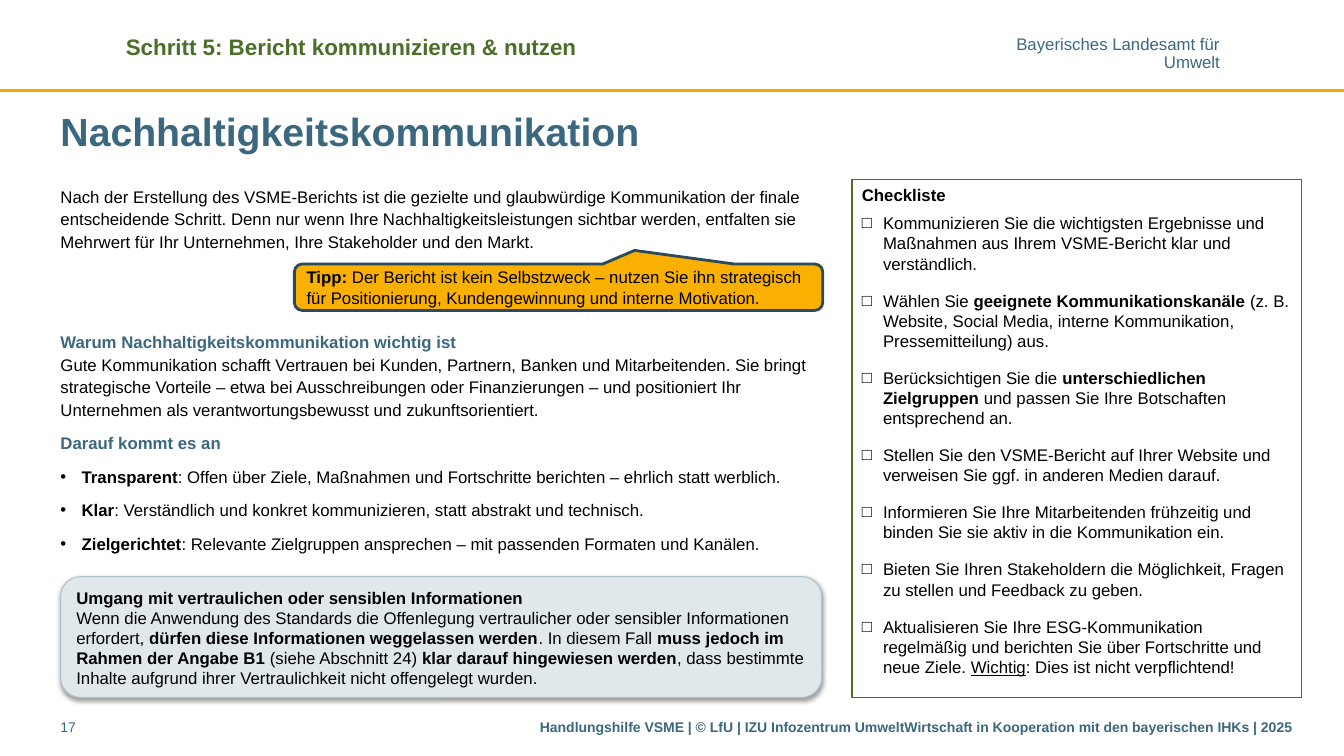
from lxml import etree
from pptx import Presentation
from pptx.dml.color import RGBColor
from pptx.enum.shapes import MSO_CONNECTOR, MSO_SHAPE
from pptx.enum.text import MSO_ANCHOR, PP_ALIGN
from pptx.oxml.ns import qn
from pptx.util import Inches, Pt

RECT = MSO_SHAPE.RECTANGLE
ROUNDED = MSO_SHAPE.ROUNDED_RECTANGLE
CALLOUT = MSO_SHAPE.ROUNDED_RECTANGULAR_CALLOUT
STRAIGHT = MSO_CONNECTOR.STRAIGHT
TOP, MIDDLE = MSO_ANCHOR.TOP, MSO_ANCHOR.MIDDLE
LEFT, RIGHT = PP_ALIGN.LEFT, PP_ALIGN.RIGHT

FONT = "Arial"
BLUE, GREEN, BLACK = "3B687F", "4B6E28", "000000"
MARGIN = 0.6
INDENT = 0.21
FLUSH = (0, 0.05)
PADDED = (0.1, 0.05)

# Each paragraph is a list of (text, style); b = bold, u = underlined, h = blue heading
INTRO = [("Nach der Erstellung des VSME-Berichts ist die gezielte und glaubwürdige Kommunikation der finale entscheidende Schritt. Denn nur wenn Ihre Nachhaltigkeitsleistungen sichtbar werden, entfalten sie Mehrwert für Ihr Unternehmen, Ihre Stakeholder und den Markt.", "")]
REASONS = [("Warum Nachhaltigkeitskommunikation wichtig ist\n", "bh"),
           ("Gute Kommunikation schafft Vertrauen bei Kunden, Partnern, Banken und Mitarbeitenden. Sie bringt strategische Vorteile – etwa bei Ausschreibungen oder Finanzierungen – und positioniert Ihr Unternehmen als verantwortungsbewusst und zukunftsorientiert.", "")]
KEY_HEADING = [("Darauf kommt es an", "bh")]
KEY_POINTS = [
    [("Transparent", "b"), (": Offen über Ziele, Maßnahmen und Fortschritte berichten – ehrlich statt werblich.", "")],
    [("Klar", "b"), (": Verständlich und konkret kommunizieren, statt abstrakt und technisch.", "")],
    [("Zielgerichtet", "b"), (": Relevante Zielgruppen ansprechen – mit passenden Formaten und Kanälen.", "")],
]
CHECKLIST = [
    [("Kommunizieren Sie die wichtigsten Ergebnisse und Maßnahmen aus Ihrem VSME-Bericht klar und verständlich.", "")],
    [("Wählen Sie ", ""), ("geeignete Kommunikationskanäle ", "b"),
     ("(z. B. Website, Social Media, interne Kommunikation, Pressemitteilung) aus.", "")],
    [("Berücksichtigen Sie die ", ""), ("unterschiedlichen Zielgruppen ", "b"),
     ("und passen Sie Ihre Botschaften entsprechend an.", "")],
    [("Stellen Sie den VSME-Bericht auf Ihrer Website und verweisen Sie ggf. in anderen Medien darauf.", "")],
    [("Informieren Sie Ihre Mitarbeitenden frühzeitig und binden Sie sie aktiv in die Kommunikation ein.", "")],
    [("Bieten Sie Ihren Stakeholdern die Möglichkeit, Fragen zu stellen und Feedback zu geben.", "")],
    [("Aktualisieren Sie Ihre ESG-Kommunikation regelmäßig und berichten Sie über Fortschritte und neue Ziele. ", ""),
     ("Wichtig", "u"), (": Dies ist nicht verpflichtend!", "")],
]
TIP = [("Tipp: ", "b"),
       ("Der Bericht ist kein Selbstzweck – nutzen Sie ihn strategisch für Positionierung, Kundengewinnung und interne Motivation.", "")]
CONFIDENTIAL = [
    ("Umgang mit vertraulichen oder sensiblen Informationen\n", "b"),
    ("Wenn die Anwendung des Standards die Offenlegung vertraulicher oder sensibler Informationen erfordert, ", ""),
    ("dürfen diese Informationen weggelassen werden", "b"), (". In diesem Fall ", ""),
    ("muss jedoch im Rahmen der Angabe B1", "b"), (" (siehe Abschnitt 24) ", ""),
    ("klar darauf hingewiesen werden", "b"),
    (", dass bestimmte Inhalte aufgrund ihrer Vertraulichkeit nicht offengelegt wurden.", ""),
]
FOOTER = "Handlungshilfe VSME | © LfU | IZU Infozentrum UmweltWirtschaft in Kooperation mit den bayerischen IHKs | 2025"


def rgb(value):
    return RGBColor.from_string(value)


def set_frame(frame, insets=PADDED, anchor=TOP, wrap=True):
    frame.word_wrap = wrap
    frame.vertical_anchor = anchor
    frame.margin_left = frame.margin_right = Inches(insets[0])
    frame.margin_top = frame.margin_bottom = Inches(insets[1])


def add_bullet(paragraph, symbol):
    props = paragraph._p.get_or_add_pPr()
    props.set("marL", str(Inches(INDENT)))
    props.set("indent", str(-Inches(INDENT)))
    color = etree.SubElement(props, qn("a:buClr"))
    etree.SubElement(color, qn("a:srgbClr"), val=BLACK)
    etree.SubElement(props, qn("a:buFont"), typeface=FONT)
    etree.SubElement(props, qn("a:buChar"), char=symbol)


def add_paragraph(frame, runs, size=12, color=BLACK, align=LEFT, spacing=None,
                  before=0, after=0, bullet=None):
    first = frame.paragraphs[0]
    paragraph = frame.add_paragraph() if first.runs else first
    if bullet:
        add_bullet(paragraph, bullet)
    paragraph.alignment = align
    paragraph.space_before, paragraph.space_after = Pt(before), Pt(after)
    if spacing:
        paragraph.line_spacing = spacing
    for text, style in runs:
        run = paragraph.add_run()
        run.text = text.rstrip("\n")
        run.font.name, run.font.size = FONT, Pt(size)
        run.font.bold, run.font.underline = "b" in style, "u" in style
        run.font.color.rgb = rgb(BLUE if "h" in style else color)
        if text.endswith("\n"):
            paragraph.add_line_break()


def add_text(slide, box, **frame_options):
    frame = slide.shapes.add_textbox(*map(Inches, box)).text_frame
    set_frame(frame, **frame_options)
    return frame


def add_panel(slide, kind, box, line, width, fill=None, anchor=TOP):
    panel = slide.shapes.add_shape(kind, *map(Inches, box))
    panel.shadow.inherit = False
    if fill:
        panel.fill.solid()
        panel.fill.fore_color.rgb = rgb(fill)
    else:
        panel.fill.background()
    panel.line.color.rgb = rgb(line)
    panel.line.width = Pt(width)
    set_frame(panel.text_frame, anchor=anchor)
    return panel


def add_soft_shadow(panel):
    effects = panel._element.spPr.find(qn("a:effectLst"))
    shadow = etree.SubElement(effects, qn("a:outerShdw"), blurRad=str(Pt(3.1)),
                              dist=str(Pt(1.6)), dir="5400000", rotWithShape="0")
    color = etree.SubElement(shadow, qn("a:srgbClr"), val=BLACK)
    etree.SubElement(color, qn("a:alpha"), val="38000")


def add_header(slide):
    rule = slide.shapes.add_connector(STRAIGHT, 0, Inches(0.9), Inches(13.33), Inches(0.9))
    rule.line.color.rgb = rgb("F9AA00")
    rule.line.width = Pt(2)
    etree.SubElement(rule._element.spPr, qn("a:effectLst"))

    agency = add_text(slide, (10.07, 0.37, 2.03, 0.34), insets=(0, 0), wrap=False)
    for line in ("Bayerisches Landesamt für", "Umwelt"):
        add_paragraph(agency, [(line, "")], color=BLUE, align=RIGHT, spacing=0.85)

    step = add_text(slide, (1.15, 0.28, 5.04, 0.37))
    add_paragraph(step, [("Schritt 5: Bericht kommunizieren & nutzen", "b")], size=16, color=GREEN)

    title = add_text(slide, (MARGIN, 1.02, 12.31, 0.55), insets=FLUSH, anchor=MIDDLE)
    add_paragraph(title, [("Nachhaltigkeitskommunikation", "b")], size=28, color=BLUE)


def add_body(slide):
    body = add_text(slide, (MARGIN, 1.78, 7.67, 5.14), insets=FLUSH)
    add_paragraph(body, INTRO, spacing=Pt(16))
    # The wide gap leaves room for the tip
    add_paragraph(body, REASONS, spacing=Pt(16), before=56)
    add_paragraph(body, KEY_HEADING, spacing=Pt(16), before=8)
    for point in KEY_POINTS:
        add_paragraph(body, point, spacing=Pt(16), before=8, bullet="•")


def add_footer(slide):
    number = add_text(slide, (MARGIN, 7.08, 0.7, 0.31), insets=FLUSH)
    add_paragraph(number, [("17", "")], size=10, color=BLUE)
    imprint = add_text(slide, (5.17, 7.08, 7.74, 0.31))
    add_paragraph(imprint, [(FOOTER, "b")], size=10, color=BLUE, align=RIGHT)


def add_panels(slide):
    # Checklist
    checklist = add_panel(slide, RECT, (8.45, 1.78, 4.46, 5.14), GREEN, 1).text_frame
    add_paragraph(checklist, [("Checkliste", "b")])
    for task in CHECKLIST:
        add_paragraph(checklist, task, before=6, after=6, bullet="□")

    # Tip
    tip = add_panel(slide, CALLOUT, (2.92, 2.62, 5.24, 0.46), "2B4B5C", 2, "F9B000", MIDDLE)
    tip.adjustments[0], tip.adjustments[1] = 0.144, -0.795
    add_paragraph(tip.text_frame, TIP)

    # Confidential information
    notice = add_panel(slide, ROUNDED, (MARGIN, 5.72, 7.55, 1.2), "B0C2CB", 0.75, "E1E8EC")
    add_soft_shadow(notice)
    add_paragraph(notice.text_frame, CONFIDENTIAL)


def main():
    deck = Presentation()
    deck.slide_width, deck.slide_height = Inches(13.33), Inches(7.5)
    slide = deck.slides.add_slide(deck.slide_layouts[6])
    add_header(slide)
    add_body(slide)
    add_footer(slide)
    add_panels(slide)
    deck.save("out.pptx")


if __name__ == "__main__":
    main()
